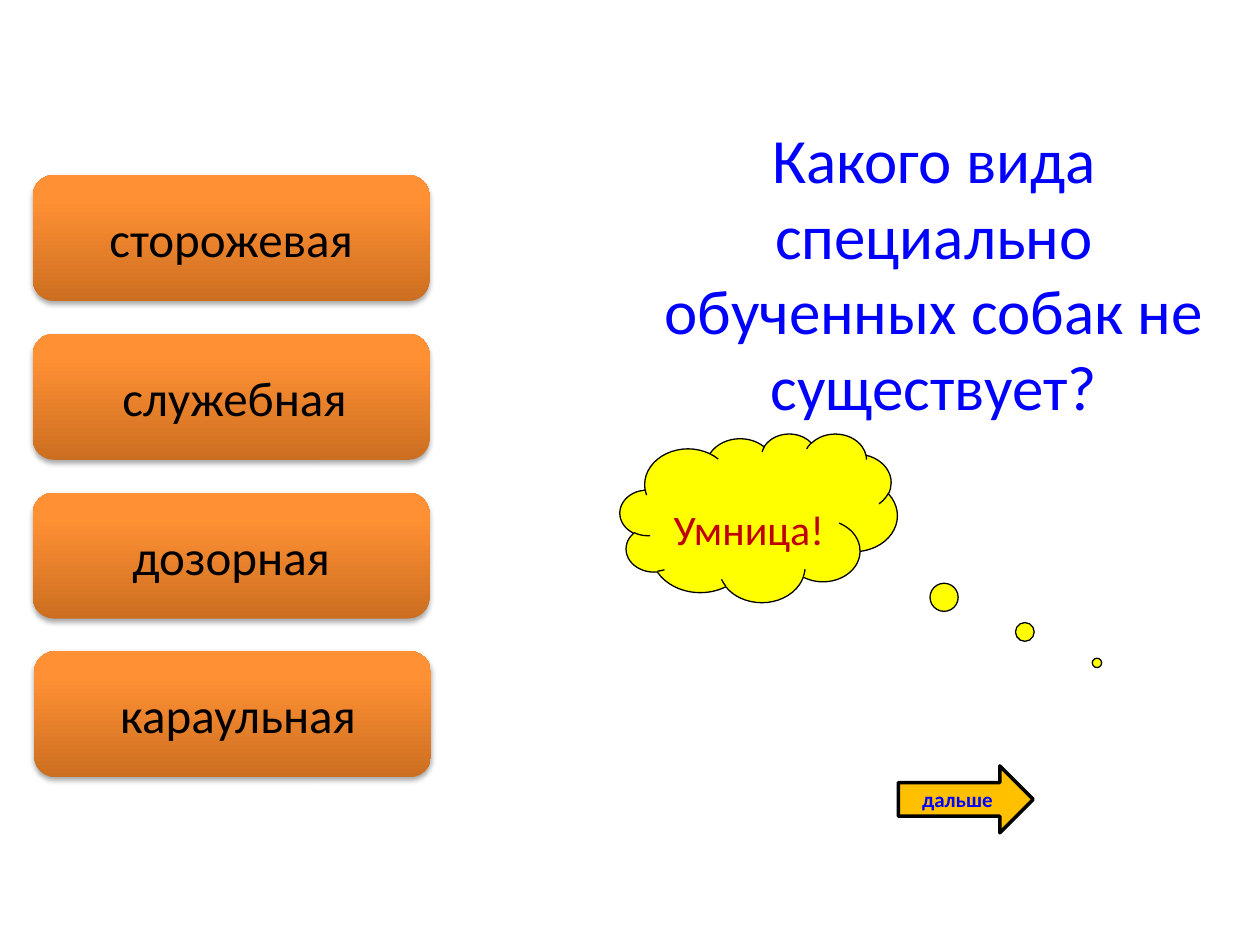
from dataclasses import dataclass

from lxml import etree
from pptx import Presentation
from pptx.dml.color import RGBColor
from pptx.enum.shapes import MSO_SHAPE
from pptx.enum.text import MSO_ANCHOR, PP_ALIGN
from pptx.oxml import parse_xml
from pptx.util import Cm, Pt

CLOUD, ARROW = MSO_SHAPE.CLOUD_CALLOUT, MSO_SHAPE.RIGHT_ARROW
ROUNDED = MSO_SHAPE.ROUNDED_RECTANGLE
TOP, MIDDLE = MSO_ANCHOR.TOP, MSO_ANCHOR.MIDDLE
CENTER = PP_ALIGN.CENTER
NS = "http://schemas.openxmlformats.org/drawingml/2006/main"


@dataclass(frozen=True)
class Theme:
    """Colours and type sizes of the quiz."""
    font: str = "Calibri"
    blue: str = "0000FF"
    red: str = "C00000"
    black: str = "000000"
    yellow: str = "FFFF00"
    gold: str = "FFC000"
    gradient: tuple = ((0, "CC6E20"), (80, "FF9034"), (100, "FF9136"))
    question: int = 36
    answer: int = 28
    praise: int = 24
    next: int = 12


THEME = Theme()


def write(sp, text, size, color, bold=False, **frame):
    """Put one centred line of text into a shape."""
    tf = sp.text_frame
    for name, value in {"word_wrap": True, **frame}.items():
        setattr(tf, name, value)
    p = tf.paragraphs[0]
    p.alignment = CENTER
    r = p.add_run()
    r.text = text
    for name, value in {"name": THEME.font, "size": Pt(size), "bold": bold}.items():
        setattr(r.font, name, value)
    r.font.color.rgb = RGBColor.from_string(color)


def add_outlined(s, kind, box, fill, width):
    """Add a flat shape with a black outline."""
    sp = s.shapes.add_shape(kind, *map(Cm, box))
    sp.shadow.inherit = False
    sp.fill.solid()
    sp.fill.fore_color.rgb = RGBColor.from_string(fill)
    sp.line.color.rgb = RGBColor.from_string(THEME.black)
    sp.line.width = Pt(width)
    return sp


def add_button(s, box, text, indent):
    """Add a glossy answer button with a soft shadow below it."""
    sp = s.shapes.add_shape(ROUNDED, *map(Cm, box))
    sp.line.fill.background()
    stops = "".join(f'<a:gs pos="{pos * 1000}"><a:srgbClr val="{color}"/></a:gs>'
                    for pos, color in THEME.gradient)
    fill = parse_xml(f'<a:gradFill xmlns:a="{NS}" rotWithShape="1"><a:gsLst>{stops}'
                     '</a:gsLst><a:lin ang="16200000" scaled="0"/></a:gradFill>')
    sp.element.spPr.find(f"{{{NS}}}prstGeom").addnext(fill)
    effects = etree.SubElement(sp.element.spPr, f"{{{NS}}}effectLst")
    effects.append(parse_xml(
        f'<a:outerShdw xmlns:a="{NS}" blurRad="{Pt(3.1)}" dist="{Pt(1.8)}" dir="5400000" '
        f'rotWithShape="0"><a:srgbClr val="{THEME.black}"><a:alpha val="35000"/>'
        '</a:srgbClr></a:outerShdw>'))
    write(sp, text, THEME.answer, THEME.black, vertical_anchor=MIDDLE,
          margin_left=Cm(0.25 + indent))


def add_answers(s, box, answers):
    """Stack the answer buttons evenly down the box."""
    left, top, width, height = box
    button = 2.54
    step = (height - button) / (len(answers) - 1)
    for i, (text, shift, indent) in enumerate(answers):
        add_button(s, (left + shift, top + i * step, width, button), text, indent)


def add_question(s, box, text):
    """Add the question text."""
    sp = s.shapes.add_textbox(*map(Cm, box))
    write(sp, text, THEME.question, THEME.blue)


def add_praise(s, box, text):
    """Add the thought cloud with its trail to the lower right."""
    sp = add_outlined(s, CLOUD, box, THEME.yellow, 0.75)
    sp.adjustments[0], sp.adjustments[1] = 1.22, 0.86
    write(sp, text, THEME.praise, THEME.red, vertical_anchor=TOP, margin_top=Cm(0.9))


def add_next(s, box, text):
    """Add the arrow to the next question."""
    sp = add_outlined(s, ARROW, box, THEME.gold, 2)
    write(sp, text, THEME.next, THEME.blue, bold=True, vertical_anchor=MIDDLE)


def main():
    """Build the quiz slide."""
    prs = Presentation()
    prs.slide_width, prs.slide_height = Cm(25.4), Cm(19.05)
    s = prs.slides.add_slide(prs.slide_layouts[6])
    add_praise(s, (12.5, 8.74, 5.59, 3.4), "Умница!")
    add_next(s, (18.11, 15.44, 2.72, 1.35), "дальше")
    add_answers(s, (0.66, 3.53, 8, 12.14), (
        ("сторожевая", 0, 0),
        ("служебная", 0, 0.14),
        ("дозорная", 0, 0),
        ("караульная", 0.03, 0.22),
    ))
    add_question(s, (13.13, 2.31, 11.4, 6.4),
                 "Какого вида специально обученных собак не существует?")
    prs.save("out.pptx")


if __name__ == "__main__":
    main()
